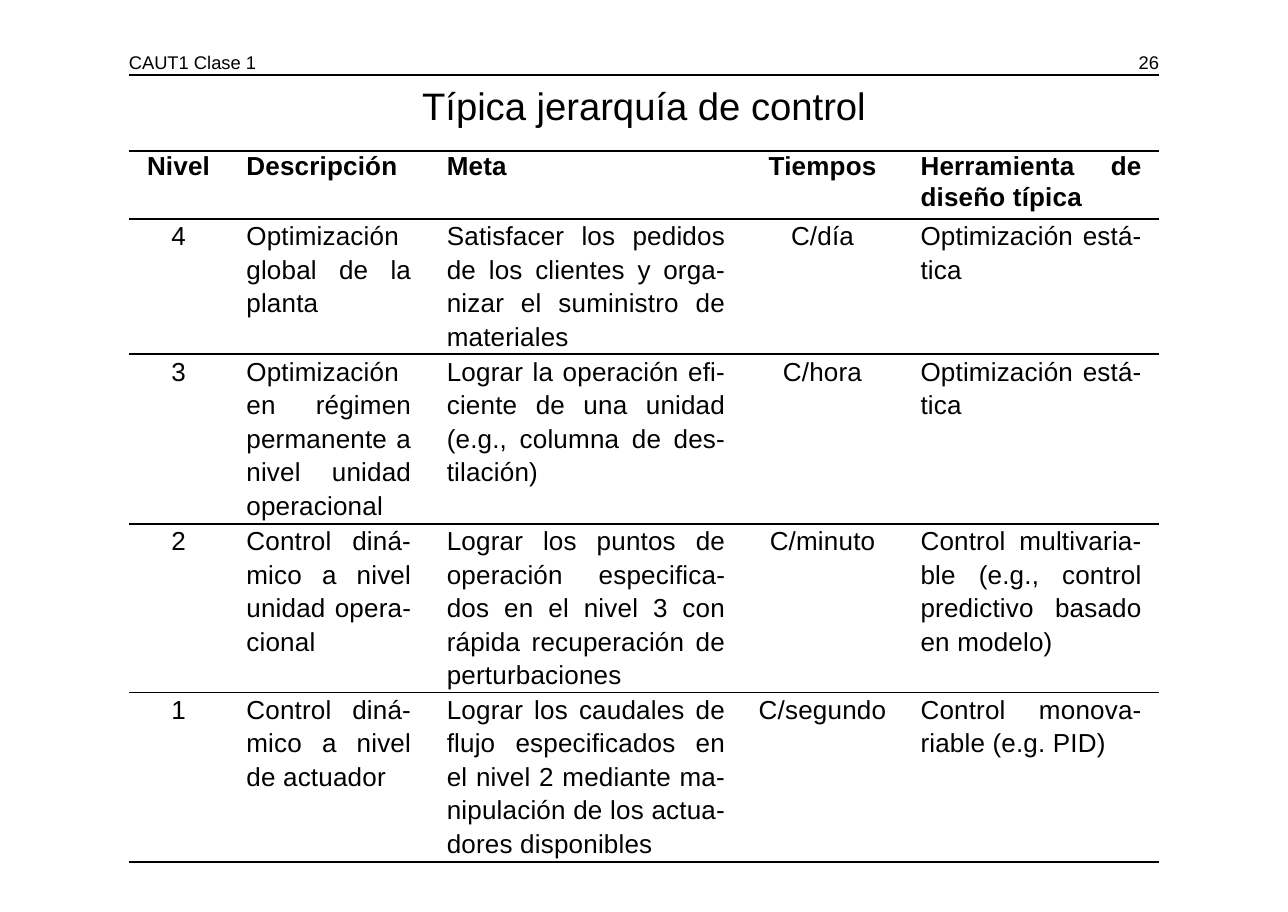
from itertools import accumulate

from lxml import etree
from pptx import Presentation
from pptx.dml.color import RGBColor
from pptx.enum import shapes, text
from pptx.oxml import ns
from pptx.util import Cm, Pt

COURSE, PAGE_NUMBER = "CAUT1 Clase 1", "26"
TITLE = "Típica jerarquía de control"
LEVELS = [
    ("Nivel", "Descripción", "Meta", "Tiempos", "Herramienta de diseño típica"),
    ("4", "Optimización global de la planta",
     "Satisfacer los pedidos de los clientes y orga- nizar el suministro de materiales",
     "C/día", "Optimización está- tica"),
    ("3", "Optimización en régimen permanente a nivel unidad operacional",
     "Lograr la operación efi- ciente de una unidad (e.g., columna de des- tilación)",
     "C/hora", "Optimización está- tica"),
    ("2", "Control diná- mico a nivel unidad opera- cional",
     "Lograr los puntos de operación especifica- dos en el nivel 3 con rápida "
     "recuperación de perturbaciones",
     "C/minuto", "Control multivaria- ble (e.g., control predictivo basado en modelo)"),
    ("1", "Control diná- mico a nivel de actuador",
     "Lograr los caudales de flujo especificados en el nivel 2 mediante ma- "
     "nipulación de los actua- dores disponibles",
     "C/segundo", "Control monova- riable (e.g. PID)"),
]
COLUMN_WIDTHS = [2.29, 4.62, 7.24, 3.68, 5.92]
ROW_HEIGHTS = [1.57, 3.12, 3.91, 3.89, 3.91]
CENTRED_COLUMNS = (0, 3)
LEFT, HEADER_RULE, TABLE_RULE = 2.97, 1.73, 3.48
TABLE_TOP = TABLE_RULE - 0.03
WIDTH = sum(COLUMN_WIDTHS)
FONT = "Arial"
BLACK = RGBColor(0, 0, 0)


def style(para, size, align, bold=False):
    para.alignment = align
    para.font.name = FONT
    para.font.size = Pt(size)
    para.font.bold = bold
    para.font.color.rgb = BLACK


def add_label(page, words, top, height, size, align):
    box = page.shapes.add_textbox(Cm(LEFT), Cm(top), Cm(WIDTH), Cm(height))
    frame = box.text_frame
    frame.word_wrap = True
    frame.margin_left = frame.margin_right = frame.margin_top = frame.margin_bottom = 0
    frame.text = words
    style(frame.paragraphs[0], size, align)


def add_rule(page, top):
    rule = page.shapes.add_connector(
        shapes.MSO_CONNECTOR.STRAIGHT, Cm(LEFT), Cm(top), Cm(LEFT + WIDTH), Cm(top))
    rule.line.color.rgb = BLACK
    rule.line.width = Pt(1.1)
    etree.SubElement(rule._element.spPr, ns.qn("a:effectLst"))


def clear_borders(cell):
    properties = cell._tc.get_or_add_tcPr()
    for side in ("lnL", "lnR", "lnT", "lnB"):
        border = etree.SubElement(properties, ns.qn(f"a:{side}"))
        etree.SubElement(border, ns.qn("a:noFill"))


def fill_cell(cell, words, header, centred):
    clear_borders(cell)
    cell.fill.background()
    cell.margin_top = cell.margin_bottom = 0
    cell.margin_left = 0 if centred else Cm(0.42)
    cell.margin_right = 0 if centred else Cm(0.4)
    cell.text = words
    para = cell.text_frame.paragraphs[0]
    style(para, 17, ALIGN.CENTER if centred else ALIGN.JUSTIFY, header)
    para.line_spacing = Pt(20.5 if header else 21.9)
    for span in para.runs:
        span._r.get_or_add_rPr().set("spc", "10")


def add_levels(page):
    table = page.shapes.add_table(
        len(LEVELS), len(COLUMN_WIDTHS), Cm(LEFT), Cm(TABLE_TOP),
        Cm(WIDTH), Cm(sum(ROW_HEIGHTS))).table
    table.horz_banding = False
    table.first_row = False
    for column, width in zip(table.columns, COLUMN_WIDTHS):
        column.width = Cm(width)
    for row, height in zip(table.rows, ROW_HEIGHTS):
        row.height = Cm(height)
    for r, level in enumerate(LEVELS):
        for c, words in enumerate(level):
            fill_cell(table.cell(r, c), words, r == 0, c in CENTRED_COLUMNS)


ALIGN = text.PP_ALIGN


def main():
    deck = Presentation()
    deck.slide_width, deck.slide_height = Cm(29.69), Cm(21.03)
    page = deck.slides.add_slide(deck.slide_layouts[6])
    for top in (HEADER_RULE, *accumulate(ROW_HEIGHTS, initial=TABLE_RULE)):
        add_rule(page, top)
    add_label(page, COURSE, 1.18, 0.5, 12, ALIGN.LEFT)
    add_label(page, PAGE_NUMBER, 1.18, 0.5, 12, ALIGN.RIGHT)
    add_label(page, TITLE, 1.9, 1, 25, ALIGN.CENTER)
    add_levels(page)
    deck.save("out.pptx")


if __name__ == "__main__":
    main()
